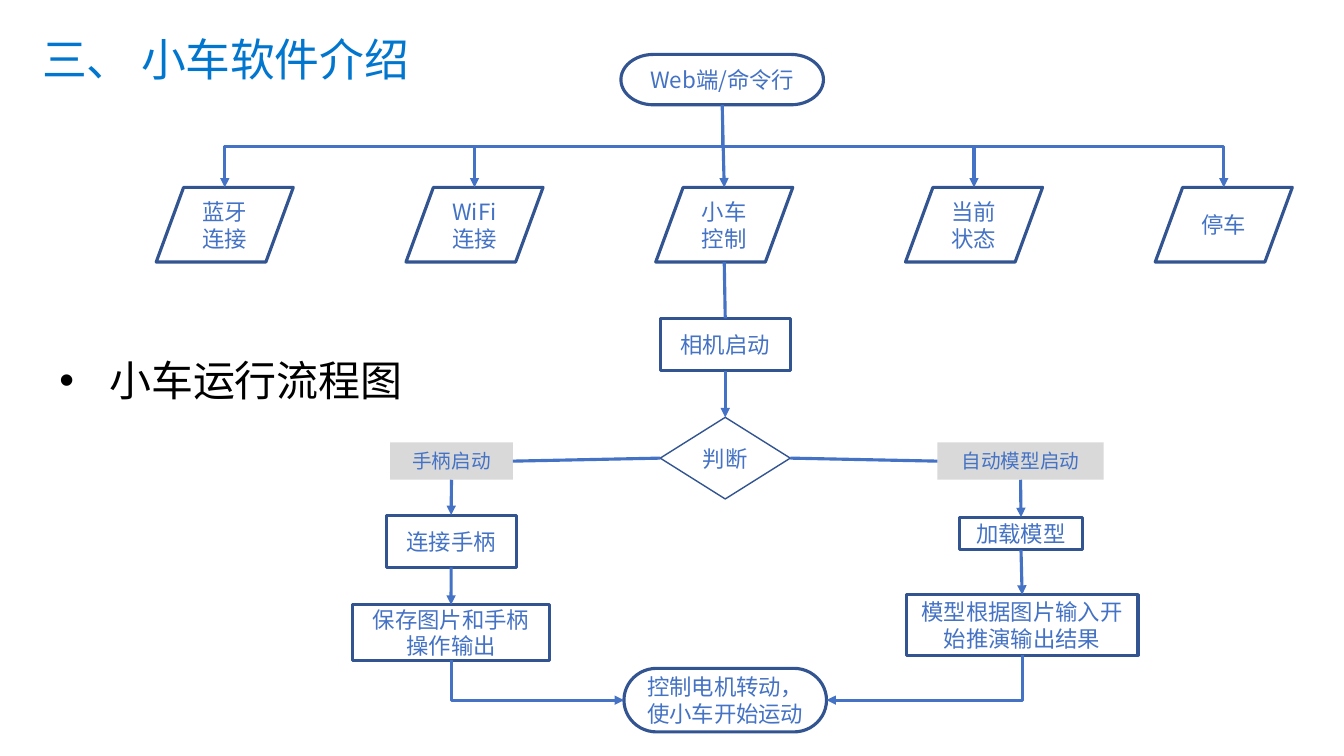
from lxml import etree
from pptx import Presentation
from pptx.dml.color import RGBColor
from pptx.enum import shapes, text
from pptx.oxml.ns import qn
from pptx.util import Pt

FONT = "Noto Sans CJK SC"
BLUE, NAVY, GREY = "4472C4", "325491", "D9D9D9"
TOP, LEFT, BOTTOM, RIGHT = range(4)
KIND = shapes.MSO_SHAPE


def style_text(para, size, color, spacing=0):
    for span in para.runs:
        span.font.size = Pt(size)
        span.font.color.rgb = RGBColor.from_string(color)
        span.font.name = FONT
        props = span.font._element
        etree.SubElement(props, qn("a:ea")).set("typeface", FONT)
        if spacing:
            props.set("spc", str(spacing))


def add_line(kind, x1, y1, x2, y2, arrow=True):
    line = page.shapes.add_connector(kind, x1, y1, x2, y2)
    line.line.color.rgb = RGBColor.from_string(BLUE)
    line.line.width = Pt(2.25)
    if arrow:
        etree.SubElement(line.line._get_or_add_ln(), qn("a:tailEnd")).set("type", "triangle")
    etree.SubElement(line._element.spPr, qn("a:effectLst"))
    return line


deck = Presentation()
deck.slide_width, deck.slide_height = Pt(960), Pt(540)
page = deck.slides.add_slide(deck.slide_layouts[6])

# Title and bullet
for words, left, top, width, height, size, color in [
    ("三、 小车软件介绍", 30.2, 23.8, 296.6, 37.4, 32, "0076CE"),
    ("小车运行流程图", 42.5, 252, 302.4, 35.3, 30, "000000"),
]:
    box = page.shapes.add_textbox(Pt(left), Pt(top), Pt(width), Pt(height))
    frame = box.text_frame
    frame.word_wrap = True
    frame.auto_size = text.MSO_AUTO_SIZE.SHAPE_TO_FIT_TEXT
    frame.margin_left = frame.margin_right = frame.margin_top = frame.margin_bottom = 0
    frame.text = words
    para = frame.paragraphs[0]
    para.line_spacing = Pt(37.3)
    style_text(para, size, color, spacing=-20)

# The last text box is the bullet
bullet_props = para._p.get_or_add_pPr()
bullet_props.set("marL", str(Pt(36)))
bullet_props.set("indent", str(-Pt(36)))
etree.SubElement(bullet_props, qn("a:buFont")).set("typeface", "Arial")
etree.SubElement(bullet_props, qn("a:buChar")).set("char", "•")

# Flow chart boxes: name, kind, words, left, top, width, height
commands = ["蓝牙连接", "WiFi连接", "小车控制", "当前状态", "停车"]
steps = [
    ("start", KIND.FLOWCHART_TERMINATOR, "Web端/命令行", 443.5, 38.9, 144.7, 36),
    ("camera", KIND.RECTANGLE, "相机启动", 471.6, 227.5, 92.9, 37.4),
    ("decision", KIND.FLOWCHART_DECISION, "判断", 471.6, 298.1, 92.9, 58.3),
    ("manual", KIND.RECTANGLE, "手柄启动", 278.6, 316.1, 87.8, 26.6),
    ("auto", KIND.RECTANGLE, "自动模型启动", 669.6, 316.1, 118.8, 26.6),
    ("gamepad", KIND.RECTANGLE, "连接手柄", 275.8, 367.9, 92.9, 37.4),
    ("load", KIND.RECTANGLE, "加载模型", 685.4, 369.4, 87.8, 23.4),
    ("save", KIND.RECTANGLE, "保存图片和手柄操作输出", 252, 432, 140.4, 39.6),
    ("infer", KIND.RECTANGLE, "模型根据图片输入开始推演输出结果", 647.3, 424.8, 165.6, 43.2),
    ("motor", KIND.FLOWCHART_TERMINATOR, "控制电机转动，使小车开始运动", 445.7, 477.4, 144.7, 45.4),
]
for column, words in enumerate(commands):
    steps.append((words, KIND.FLOWCHART_DATA, words, 111.6 + 178.4 * column, 133.9, 97.9, 53.3))

boxes = {}
for name, kind, words, left, top, width, height in steps:
    box = page.shapes.add_shape(kind, Pt(left), Pt(top), Pt(width), Pt(height))
    box.shadow.inherit = False
    is_label = name in ("manual", "auto")
    if is_label:
        box.fill.solid()
        box.fill.fore_color.rgb = RGBColor.from_string(GREY)
        box.line.fill.background()
    else:
        box.fill.background()
        box.line.color.rgb = RGBColor.from_string(NAVY)
        box.line.width = Pt(1 if name == "decision" else 2.25)
    box.text_frame.text = words
    box.text_frame.vertical_anchor = text.MSO_ANCHOR.MIDDLE
    para = box.text_frame.paragraphs[0]
    para.alignment = text.PP_ALIGN.CENTER
    style_text(para, 14 if is_label else 16, BLUE)
    boxes[name] = box

# Straight connectors between the middles of sides
for first, first_side, second, second_side, arrow in [
    ("start", BOTTOM, "小车控制", TOP, True),
    ("小车控制", BOTTOM, "camera", TOP, False),
    ("camera", BOTTOM, "decision", TOP, True),
    ("decision", LEFT, "manual", RIGHT, False),
    ("decision", RIGHT, "auto", LEFT, False),
    ("manual", BOTTOM, "gamepad", TOP, True),
    ("auto", BOTTOM, "load", TOP, True),
    ("gamepad", BOTTOM, "save", TOP, True),
    ("load", BOTTOM, "infer", TOP, True),
]:
    ends = []
    for name, side in [(first, first_side), (second, second_side)]:
        box = boxes[name]
        ends.append(box.left + box.width * (1, 0, 1, 2)[side] // 2)
        ends.append(box.top + box.height * (0, 1, 2, 1)[side] // 2)
    line = add_line(shapes.MSO_CONNECTOR.STRAIGHT, *ends, arrow=arrow)
    # A parallelogram numbers its connection sites differently
    if first not in commands:
        line.begin_connect(boxes[first], first_side)
    if second not in commands:
        line.end_connect(boxes[second], second_side)

# Elbows leave downwards, so each is a turned horizontal elbow
elbows = [("start", name, TOP) for name in commands if name != "小车控制"]
elbows += [("save", "motor", LEFT), ("infer", "motor", RIGHT)]
for first, second, side in elbows:
    source, target = boxes[first], boxes[second]
    x1, y1 = source.left + source.width // 2, source.top + source.height
    x2 = target.left + target.width * (1, 0, 1, 2)[side] // 2
    y2 = target.top + target.height * (0, 1, 2, 1)[side] // 2
    x_mid, y_mid = (x1 + x2) // 2, (y1 + y2) // 2
    half_drop, half_run = (y2 - y1) // 2, abs(x2 - x1) // 2
    line = add_line(shapes.MSO_CONNECTOR.ELBOW, x_mid - half_drop, y_mid - half_run,
                    x_mid + half_drop, y_mid + half_run)
    frame = line._element.spPr.find(qn("a:xfrm"))
    frame.set("rot", str((270 if x2 > x1 else 90) * 60000))
    if x2 > x1:
        frame.set("flipH", "1")
    if side != TOP:
        line._element.spPr.find(qn("a:prstGeom")).set("prst", "bentConnector2")

deck.save("out.pptx")
